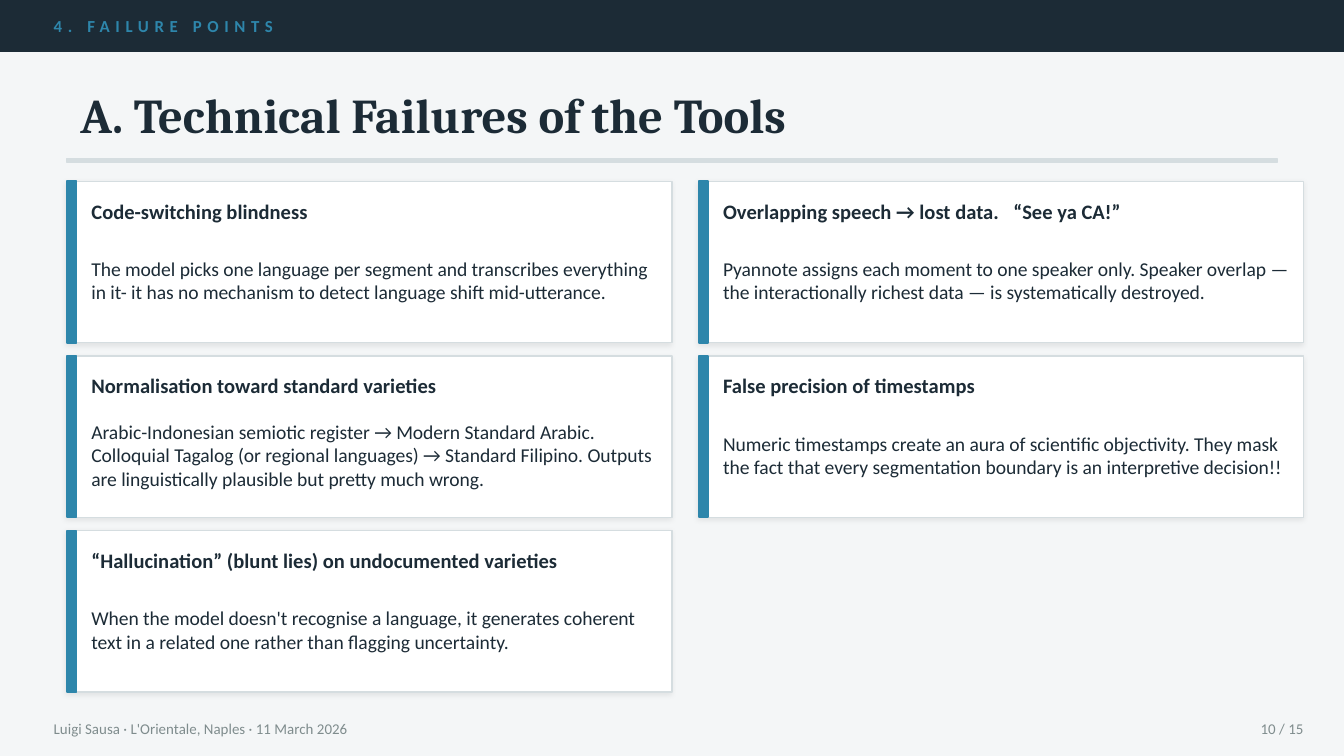
from lxml import etree
from pptx import Presentation
from pptx import util as u
from pptx.dml.color import RGBColor
from pptx.enum import shapes, text
from pptx.oxml.ns import qn

PX = 4572  # EMU per px, 200 px to the inch
WIDTH, HEIGHT = 2000, 1125

NAVY = RGBColor(0x1C, 0x2B, 0x36)
BLUE = RGBColor(0x2E, 0x86, 0xAB)
RULE = RGBColor(0xD5, 0xDD, 0xE0)
GREY = RGBColor(0x7F, 0x8C, 0x8D)
WHITE = RGBColor(0xFF, 0xFF, 0xFF)
PAPER = RGBColor(0xF4, 0xF6, 0xF7)

SECTION = "4. FAILURE POINTS"
TITLE = "A. Technical Failures of the Tools"
FOOTER = ["Luigi Sausa", "L'Orientale, Naples", "11 March 2026"]
PAGE_NUMBER = "10 / 15"
COLUMNS = [
    [
        ("Code-switching blindness",
         "The model picks one language per segment and transcribes everything in it- "
         "it has no mechanism to detect language shift mid-utterance."),
        ("Normalisation toward standard varieties",
         "Arabic-Indonesian semiotic register → Modern Standard Arabic. Colloquial "
         "Tagalog (or regional languages) → Standard Filipino. Outputs are "
         "linguistically plausible but pretty much wrong."),
        ("“Hallucination” (blunt lies) on undocumented varieties",
         "When the model doesn't recognise a language, it generates coherent text in "
         "a related one rather than flagging uncertainty."),
    ],
    [
        ("Overlapping speech → lost data.\t“See ya CA!”",
         "Pyannote assigns each moment to one speaker only. Speaker overlap — the "
         "interactionally richest data — is systematically destroyed."),
        ("False precision of timestamps",
         "Numeric timestamps create an aura of scientific objectivity. They mask the "
         "fact that every segmentation boundary is an interpretive decision!!"),
    ],
]

CARD_LEFT, CARD_TOP = 100, 270
CARD_WIDTH, CARD_HEIGHT = 900, 240
GAP_X, GAP_Y = 40, 20
ACCENT_WIDTH = 14
TEXT_INDENT = 36
HEADING_TAB = 432


def add_rect(page, left, top, width, height, fill, line, weight=1):
    rect = page.shapes.add_shape(
        shapes.MSO_SHAPE.RECTANGLE, left * PX, top * PX, width * PX, height * PX)
    rect.shadow.inherit = False
    rect.fill.solid()
    rect.fill.fore_color.rgb = fill
    rect.line.color.rgb = line
    rect.line.width = u.Pt(weight)
    return rect


def add_soft_shadow(shape):
    effects = shape._element.spPr.find(qn("a:effectLst"))
    shadow = etree.SubElement(
        effects, qn("a:outerShdw"), blurRad=str(u.Pt(3)), dist=str(u.Pt(1)),
        dir=str(135 * 60000), algn="bl", rotWithShape="0")
    color = etree.SubElement(shadow, qn("a:srgbClr"), val="000000")
    etree.SubElement(color, qn("a:alpha"), val="7000")


def add_text(page, left, top, width, height, words, size, color, bold=False,
             font="Calibri", inset=0, align=text.PP_ALIGN.LEFT, spacing=0, tab=0):
    """Add a one-paragraph box, centred vertically; spacing is in points."""
    box = page.shapes.add_textbox(left * PX, top * PX, width * PX, height * PX)
    frame = box.text_frame
    frame.word_wrap = True
    frame.vertical_anchor = text.MSO_ANCHOR.MIDDLE
    if inset is not None:
        frame.margin_left = frame.margin_right = inset * PX
        frame.margin_top = frame.margin_bottom = inset * PX
    para = frame.paragraphs[0]
    para.text = words
    para.alignment = align
    if tab:
        stops = etree.SubElement(para._p.get_or_add_pPr(), qn("a:tabLst"))
        etree.SubElement(stops, qn("a:tab"), pos=str(tab * PX), algn="l")
    for span in para.runs:
        span.font.name = font
        span.font.size = u.Pt(size)
        span.font.bold = bold
        span.font.color.rgb = color
        if spacing:
            span._r.get_or_add_rPr().set("spc", str(spacing * 100))


def add_card(page, left, top, heading, body):
    card = add_rect(page, left, top, CARD_WIDTH, CARD_HEIGHT, WHITE, RULE, 0.75)
    add_soft_shadow(card)
    add_rect(page, left, top, ACCENT_WIDTH, CARD_HEIGHT, BLUE, BLUE)
    text_left = left + TEXT_INDENT
    add_text(page, text_left, top + 16, 850, 56, heading, 11, NAVY, bold=True,
             tab=HEADING_TAB if "\t" in heading else 0)
    add_text(page, text_left, top + 72, 844, 150, body, 10.5, NAVY)


def main():
    deck = Presentation()
    deck.slide_width, deck.slide_height = WIDTH * PX, HEIGHT * PX
    page = deck.slides.add_slide(deck.slide_layouts[6])
    page.background.fill.solid()
    page.background.fill.fore_color.rgb = PAPER

    add_rect(page, 0, 0, WIDTH, 76, NAVY, NAVY)
    add_text(page, 80, 0, 1840, 76, SECTION, 9, BLUE, bold=True, spacing=3)
    add_text(page, 100, 100, 1800, 140, TITLE, 26, NAVY, bold=True,
             font="Cambria", inset=None)
    add_rect(page, 100, 236, 1800, 6, RULE, RULE)

    for column, cards in enumerate(COLUMNS):
        for row, (heading, body) in enumerate(cards):
            add_card(page, CARD_LEFT + column * (CARD_WIDTH + GAP_X),
                     CARD_TOP + row * (CARD_HEIGHT + GAP_Y), heading, body)

    add_text(page, 80, 1056, 1600, 56, " · ".join(FOOTER), 8, GREY)
    add_text(page, 1800, 1056, 140, 56, PAGE_NUMBER, 8, GREY,
             align=text.PP_ALIGN.RIGHT)
    deck.save("out.pptx")


if __name__ == "__main__":
    main()
